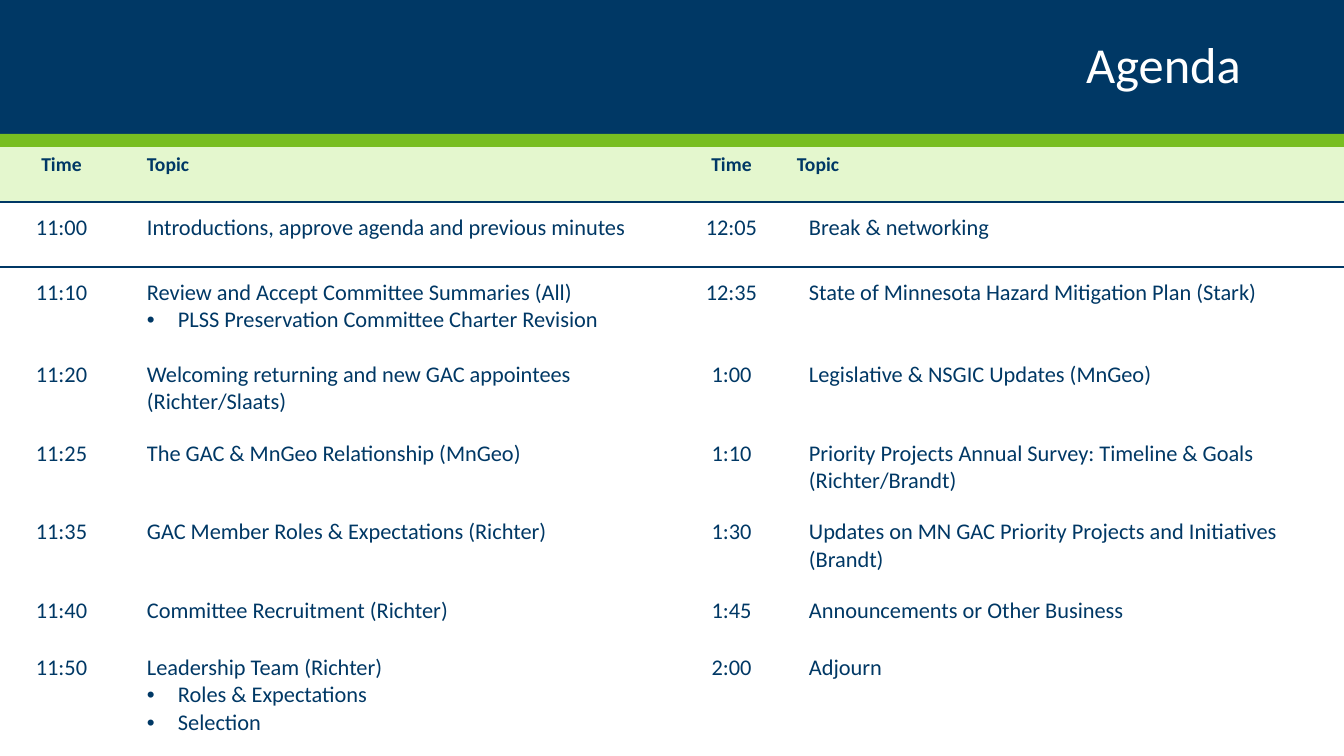
from lxml.etree import SubElement
from pptx import Presentation
from pptx.dml.color import RGBColor
from pptx.enum.shapes import MSO_SHAPE
from pptx.enum.text import MSO_ANCHOR, PP_ALIGN
from pptx.oxml import parse_xml
from pptx.oxml.ns import nsdecls, qn
from pptx.util import Pt

COLORS = {
    "navy": "003865",
    "green": "78BE21",
    "pale": "E4F7CE",
    "white": "FFFFFF",
    "page": "E8E8E8",
}
EMU_PER_PX = 914400 / 100.8
PLAIN_TABLE = "{2D5ABB26-0587-4C30-8999-92F81FD0307C}"
COLUMN_WIDTHS = [123, 555, 107, 559]
ROW_HEIGHTS = [55, 65, 82, 72, 72, 72, 57, 133]
HEADER = ["Time", ["Topic"], "Time", ["Topic"]]
AGENDA = [
    ["11:00", ["Introductions, approve agenda and previous minutes"],
     "12:05", ["Break & networking"]],
    ["11:10", ["Review and Accept Committee Summaries (All)",
               "PLSS Preservation Committee Charter Revision"],
     "12:35", ["State of Minnesota Hazard Mitigation Plan (Stark)"]],
    ["11:20", ["Welcoming returning and new GAC appointees (Richter/Slaats)"],
     "1:00", ["Legislative & NSGIC Updates (MnGeo)"]],
    ["11:25", ["The GAC & MnGeo Relationship (MnGeo)"],
     "1:10", ["Priority Projects Annual Survey: Timeline & Goals (Richter/Brandt)"]],
    ["11:35", ["GAC Member Roles & Expectations (Richter)"],
     "1:30", ["Updates on MN GAC Priority Projects and Initiatives (Brandt)"]],
    ["11:40", ["Committee Recruitment (Richter)"],
     "1:45", ["Announcements or Other Business"]],
    ["11:50", ["Leadership Team (Richter)", "Roles & Expectations", "Selection"],
     "2:00", ["Adjourn"]],
]


def px(length):
    return round(length * EMU_PER_PX)


def color(name):
    return RGBColor.from_string(COLORS[name])


class AgendaPage:
    """Holds the type style and the current slide, and draws its elements."""

    def __init__(self, page, font="Calibri"):
        self.page = page
        self.font = font
        page.background.fill.solid()
        page.background.fill.fore_color.rgb = color("page")

    def style(self, para, size, ink, bold=False):
        for span in para.runs:
            span.font.name = self.font
            span.font.size = Pt(size)
            span.font.bold = bold
            span.font.color.rgb = color(ink)

    def band(self, top, height, fill):
        band = self.page.shapes.add_shape(
            MSO_SHAPE.RECTANGLE, 0, px(top), px(1344), px(height))
        band.shadow.inherit = False
        band.fill.solid()
        band.fill.fore_color.rgb = color(fill)
        band.line.fill.background()
        self.page.shapes.title.element.addprevious(band.element)

    def title(self, text, left, top, width, height):
        title = self.page.shapes.title
        title.left, title.top = px(left), px(top)
        title.width, title.height = px(width), px(height)
        title.text_frame.text = text
        title.text_frame.vertical_anchor = MSO_ANCHOR.MIDDLE
        para = title.text_frame.paragraphs[0]
        para.alignment = PP_ALIGN.RIGHT
        para.line_spacing = 0.9
        self.style(para, 36, "white")

    def bullet(self, para):
        properties = para._p.get_or_add_pPr()
        properties.set("marL", str(px(31)))
        properties.set("indent", str(-px(31)))
        SubElement(properties, qn("a:buFont")).set("typeface", "Arial")
        SubElement(properties, qn("a:buChar")).set("char", "•")

    def border(self, cell, side):
        cell._tc.get_or_add_tcPr().insert(0, parse_xml(
            f'<a:{side} {nsdecls("a")} w="{Pt(1)}"><a:solidFill>'
            f'<a:srgbClr val="{COLORS["navy"]}"/></a:solidFill></a:{side}>'))

    def cell(self, cell, content, is_header, left_margin):
        is_topic = isinstance(content, list)
        cell.margin_left, cell.margin_right = px(left_margin), px(12)
        cell.margin_top = cell.margin_bottom = px(6 if is_header else 12)
        cell.fill.solid()
        cell.fill.fore_color.rgb = color("pale" if is_header else "white")
        cell.text_frame.text = "\n".join(content) if is_topic else content
        for index, para in enumerate(cell.text_frame.paragraphs):
            para.alignment = PP_ALIGN.LEFT if is_topic else PP_ALIGN.CENTER
            if index:
                self.bullet(para)
            self.style(para, 14 if is_header else 16, "navy", is_header)

    def table(self, rows, top):
        frame = self.page.shapes.add_table(
            len(rows), len(COLUMN_WIDTHS), 0, px(top),
            px(sum(COLUMN_WIDTHS)), px(sum(ROW_HEIGHTS)))
        table = frame.table
        table.horz_banding = False
        next(frame.element.iter(qn("a:tableStyleId"))).text = PLAIN_TABLE
        for column, width in zip(table.columns, COLUMN_WIDTHS):
            column.width = px(width)
        for row_index, contents in enumerate(rows):
            table.rows[row_index].height = px(ROW_HEIGHTS[row_index])
            is_header = row_index == 0
            for column_index, content in enumerate(contents):
                cell = table.cell(row_index, column_index)
                indented = column_index == 1 or (column_index == 3 and not is_header)
                self.cell(cell, content, is_header, 24 if indented else 12)
                if row_index < 2:
                    self.border(cell, "lnB" if is_header else "lnT")


def main():
    deck = Presentation()
    deck.slide_width, deck.slide_height = px(1344), px(756)
    agenda = AgendaPage(deck.slides.add_slide(deck.slide_layouts[5]))
    agenda.band(0, 134, "navy")
    agenda.band(134, 13, "green")
    agenda.title("Agenda", 92, 17, 1159, 101)
    agenda.table([HEADER, *AGENDA], 147)
    deck.save("out.pptx")


if __name__ == "__main__":
    main()
